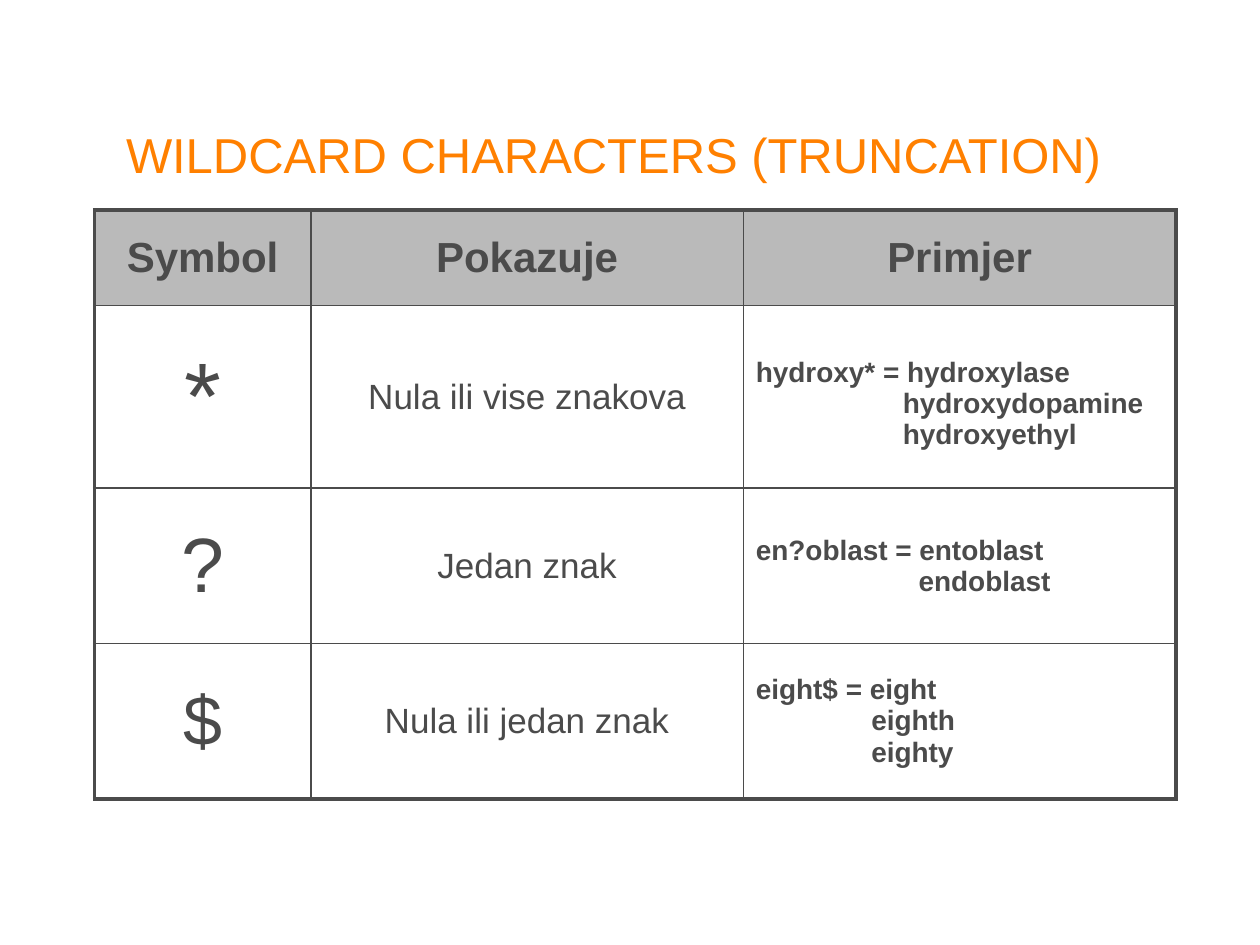
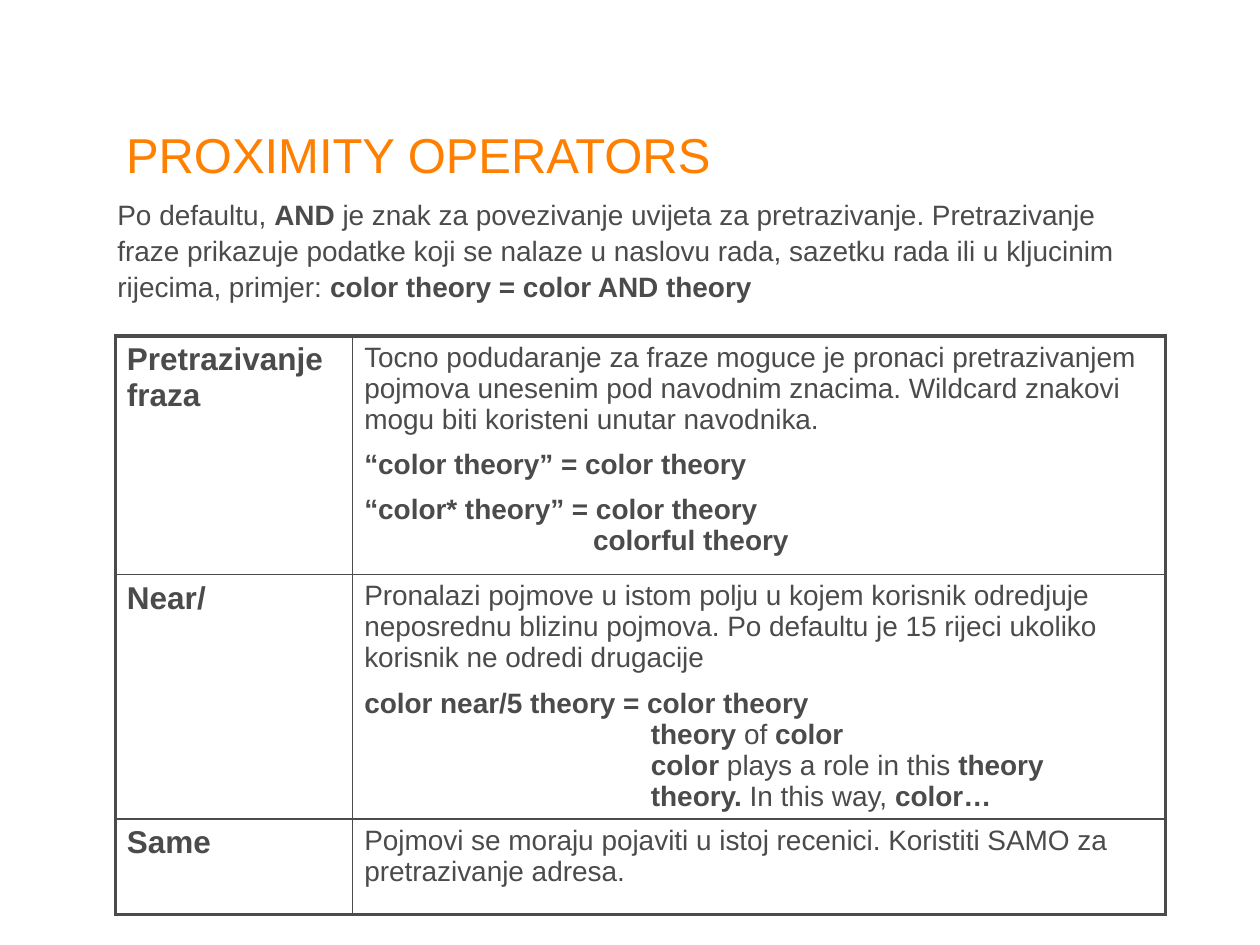
from copy import deepcopy
from dataclasses import dataclass

from lxml import etree
from pptx import Presentation
from pptx.dml.color import RGBColor
from pptx.enum.text import MSO_ANCHOR, MSO_AUTO_SIZE, PP_ALIGN
from pptx.oxml.ns import qn
from pptx.util import Inches, Pt

LEFT, CENTER = PP_ALIGN.LEFT, PP_ALIGN.CENTER
TOP, MIDDLE, BOTTOM = MSO_ANCHOR.TOP, MSO_ANCHOR.MIDDLE, MSO_ANCHOR.BOTTOM
FIXED = MSO_AUTO_SIZE.NONE
TITLE_ONLY = 5


@dataclass(frozen=True)
class Theme:
    font: str = "Arial"
    orange: str = "FF8000"
    ink: str = "4B4B4B"
    gray: str = "BABABA"
    white: str = "FFFFFF"
    title: int = 28
    head: int = 24
    label: int = 18
    mid: int = 20
    body: int = 16
    gap: int = 8
    thick: float = 2.25
    thin: float = 1


@dataclass(frozen=True)
class Cell:
    """Cell text: parts between bars are bold, hang indents later lines."""
    text: tuple
    size: int = Theme.body
    align: int = LEFT
    hang: float = 0
    drop: float = 0
    fill: str = Theme.white


THEME = Theme()


def grid(n):
    """The slide is a grid of 120 columns by 90 rows."""
    return Inches(n / 12)


def place(shape, box):
    shape.left, shape.top, shape.width, shape.height = map(grid, box)


def style(run, size, color, bold=False):
    font = run.font
    font.name, font.size, font.bold = THEME.font, Pt(size), bold
    font.color.rgb = RGBColor.from_string(color)


def write(para, text, size, color=THEME.ink):
    """Fill a paragraph; bars switch bold on and off."""
    for i, part in enumerate(text.split("|")):
        for j, line in enumerate(part.split("\n")):
            if j:
                para.add_line_break()
            if line:
                run = para.add_run()
                run.text = line
                style(run, size, color, i % 2 == 1)
    # Line breaks take the type size of the text around them
    look = para.runs[0].font._element
    for br in para._p.findall(qn("a:br")):
        br.insert(0, deepcopy(look))


def add_title(slide, text):
    title = slide.shapes.title
    place(title, (12, 6.6, 96.7, 10.9))
    frame = title.text_frame
    frame.auto_size, frame.word_wrap = FIXED, True
    frame.vertical_anchor = BOTTOM
    frame.margin_left = frame.margin_right = 0
    frame.margin_top = frame.margin_bottom = 0
    frame.text = text
    para = frame.paragraphs[0]
    para.alignment, para.line_spacing = LEFT, 0.9
    style(para.runs[0], THEME.title, THEME.orange)


def add_note(slide, box, text):
    note = slide.shapes.add_textbox(*map(grid, box))
    frame = note.text_frame
    frame.word_wrap = True
    para = frame.paragraphs[0]
    para.line_spacing = 1.07
    write(para, text, THEME.body)


def add_edges(cell, sides):
    """Draw the four borders; sides maps each tag to its width."""
    props = cell._tc.get_or_add_tcPr()
    for i, (tag, width) in enumerate(sides.items()):
        line = etree.Element(qn(f"a:{tag}"), w=str(Pt(width)))
        fill = etree.SubElement(line, qn("a:solidFill"))
        etree.SubElement(fill, qn("a:srgbClr"), val=THEME.ink)
        props.insert(i, line)


def fill_cell(cell, item, anchor, pad):
    cell.fill.solid()
    cell.fill.fore_color.rgb = RGBColor.from_string(item.fill)
    cell.vertical_anchor = anchor
    cell.margin_left = cell.margin_right = grid(pad)
    cell.margin_top = grid(0.6 + item.drop)
    cell.margin_bottom = grid(0.6)
    frame = cell.text_frame
    for i, text in enumerate(item.text):
        para = frame.add_paragraph() if i else frame.paragraphs[0]
        para.alignment = item.align
        if i:
            para.space_before = Pt(THEME.gap)
        if "\n" in text:
            props = para._p.get_or_add_pPr()
            props.set("marL", str(grid(item.hang)))
            props.set("indent", str(-grid(item.hang)))
        write(para, text, item.size)


def add_grid(slide, spot, cols, rows, items, anchor, pad):
    """Add a table with thick outer and thin inner lines."""
    box = (*spot, sum(cols), sum(rows))
    table = slide.shapes.add_table(len(rows), len(cols),
                                   *map(grid, box)).table
    table.first_row = table.horz_banding = False
    for col, width in zip(table.columns, cols):
        col.width = grid(width)
    for row, height in zip(table.rows, rows):
        row.height = grid(height)

    def weight(outer):
        return THEME.thick if outer else THEME.thin

    for r, line in enumerate(items):
        for c, item in enumerate(line):
            cell = table.cell(r, c)
            fill_cell(cell, item, anchor, pad)
            add_edges(cell, {"lnL": weight(c == 0),
                             "lnR": weight(c == len(cols) - 1),
                             "lnT": weight(r == 0),
                             "lnB": weight(r == len(rows) - 1)})


def head(text):
    return Cell((f"|{text}|",), THEME.head, CENTER, fill=THEME.gray)


def mid(text, size=THEME.mid):
    return Cell((text,), size, CENTER)


def label(text):
    return Cell((f"|{text}|",), THEME.label)


def add_wild(slide):
    add_title(slide, "WILDCARD CHARACTERS (TRUNCATION)")
    items = [
        [head("Symbol"), head("Pokazuje"), head("Primjer")],
        [mid("*", 54), mid("Nula ili vise znakova"),
         Cell(("|hydroxy* = hydroxylase\nhydroxydopamine\nhydroxyethyl|",),
              hang=14, drop=1.3)],
        [mid("?", 44), mid("Jedan znak"),
         Cell(("|en?oblast = entoblast\nendoblast|",), hang=15.5)],
        [mid("$", 40), mid("Nula ili jedan znak"),
         Cell(("|eight$ = eight\neighth\neighty|",), hang=11)],
    ]
    add_grid(slide, (9, 20), (20.6, 41.2, 41.2), (9.1, 17.4, 14.8, 14.8),
             items, MIDDLE, 1.2)


def add_near(slide):
    add_title(slide, "PROXIMITY OPERATORS")
    items = [
        [label("Pretrazivanje fraza"),
         Cell(("Tocno podudaranje za fraze moguce je pronaci pretrazivanjem "
               "pojmova unesenim pod navodnim znacima. Wildcard znakovi "
               "mogu biti koristeni unutar navodnika.",
               "|“color theory” = color theory|",
               "|“color* theory” = color theory\ncolorful theory|"),
              hang=21.8)],
        [label("Near/"),
         Cell(("Pronalazi pojmove u istom polju u kojem korisnik odredjuje "
               "neposrednu blizinu pojmova. Po defaultu je 15 rijeci ukoliko "
               "korisnik ne odredi drugacije",
               "|color near/5 theory = color theory\ntheory |of |color\n"
               "color |plays a role in this |theory\n"
               "theory. |In this way, |color…|"),
              hang=27.3)],
        [label("Same"),
         Cell(("Pojmovi se moraju pojaviti u istoj recenici. Koristiti SAMO "
               "za pretrazivanje adresa.",))],
    ]
    add_grid(slide, (11, 32), (22.6, 77.4), (22.7, 23.3, 9.1),
             items, TOP, 1.1)
    add_note(slide, (10, 18, 100, 14.5),
             "Po defaultu, |AND| je znak za povezivanje uvijeta za "
             "pretrazivanje. Pretrazivanje fraze prikazuje podatke koji se "
             "nalaze u naslovu rada, sazetku rada ili u kljucinim rijecima, "
             "primjer: |color theory = color AND theory|")


def main():
    deck = Presentation()
    deck.slide_width, deck.slide_height = grid(120), grid(90)
    for build in (add_wild, add_near):
        build(deck.slides.add_slide(deck.slide_layouts[TITLE_ONLY]))
    deck.save("out.pptx")


if __name__ == "__main__":
    main()
